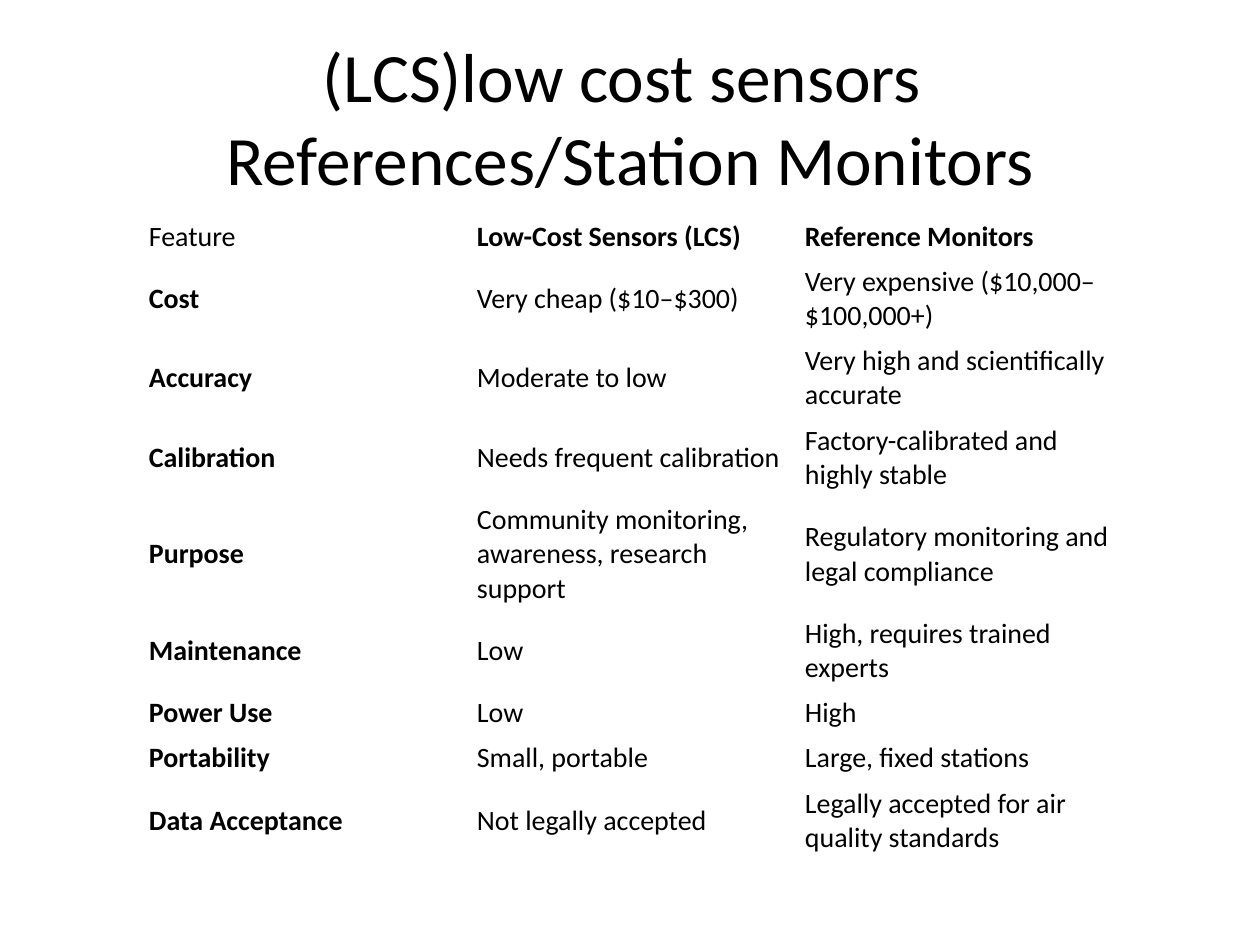
import pptx
import pptx.util
import pptx.dml.color
import pptx.enum.text

SCALE = 914400 / 126
ANCHOR = pptx.enum.text.MSO_ANCHOR
ALIGN = pptx.enum.text.PP_ALIGN

ROWS = [
    (1, "Feature", "Low-Cost Sensors (LCS)", "Reference Monitors"),
    (2, "Cost", "Very cheap ($10–$300)", "Very expensive ($10,000–$100,000+)"),
    (2, "Accuracy", "Moderate to low", "Very high and scientifically accurate"),
    (2, "Calibration", "Needs frequent calibration", "Factory-calibrated and highly stable"),
    (3, "Purpose", "Community monitoring, awareness, research support",
     "Regulatory monitoring and legal compliance"),
    (2, "Maintenance", "Low", "High, requires trained experts"),
    (1, "Power Use", "Low", "High"),
    (1, "Portability", "Small, portable", "Large, fixed stations"),
    (2, "Data Acceptance", "Not legally accepted", "Legally accepted for air quality standards"),
]


def px(n):
    return pptx.util.Emu(round(n * SCALE))


def paint(color, code):
    color.rgb = pptx.dml.color.RGBColor.from_string(code)


def apply(target, values):
    for name, value in values.items():
        setattr(target, name, value)


def style(para, size, bold):
    for run in para.runs:
        apply(run.font, {"name": "Calibri", "size": pptx.util.Pt(size), "bold": bold})
        paint(run.font.color, "000000")


def title(slide, box, text):
    frame = slide.shapes.add_textbox(*map(px, box)).text_frame
    apply(frame, {"word_wrap": True, "vertical_anchor": ANCHOR.MIDDLE})
    para = frame.paragraphs[0]
    apply(para, {"text": text, "alignment": ALIGN.CENTER})
    style(para, 39.6, False)


def table(slide, box, rows):
    count = len(rows[0]) - 1
    grid = slide.shapes.add_table(len(rows), count, *map(px, box)).table
    apply(grid, {"first_row": False, "horz_banding": False})
    for col in grid.columns:
        col.width = px(box[2] // count)
    for r, (lines, *texts) in enumerate(rows):
        grid.rows[r].height = px((21 + 69 * lines) / 2)
        for c, text in enumerate(texts):
            cell = grid.cell(r, c)
            apply(cell, {"text": text, "vertical_anchor": ANCHOR.MIDDLE,
                         "margin_left": px(12), "margin_right": px(12),
                         "margin_top": px(5), "margin_bottom": px(5)})
            cell.fill.background()
            style(cell.text_frame.paragraphs[0], 16, (r == 0) != (c == 0))


def main():
    deck = pptx.Presentation()
    apply(deck, {"slide_width": px(1260), "slide_height": px(945)})
    slide = deck.slides.add_slide(deck.slide_layouts[6])
    title(slide, (63, 37, 1134, 158), "(LCS)low cost sensors \vReferences/Station Monitors")
    table(slide, (137, 214, 984, 646), ROWS)
    deck.save("out.pptx")


if __name__ == "__main__":
    main()
